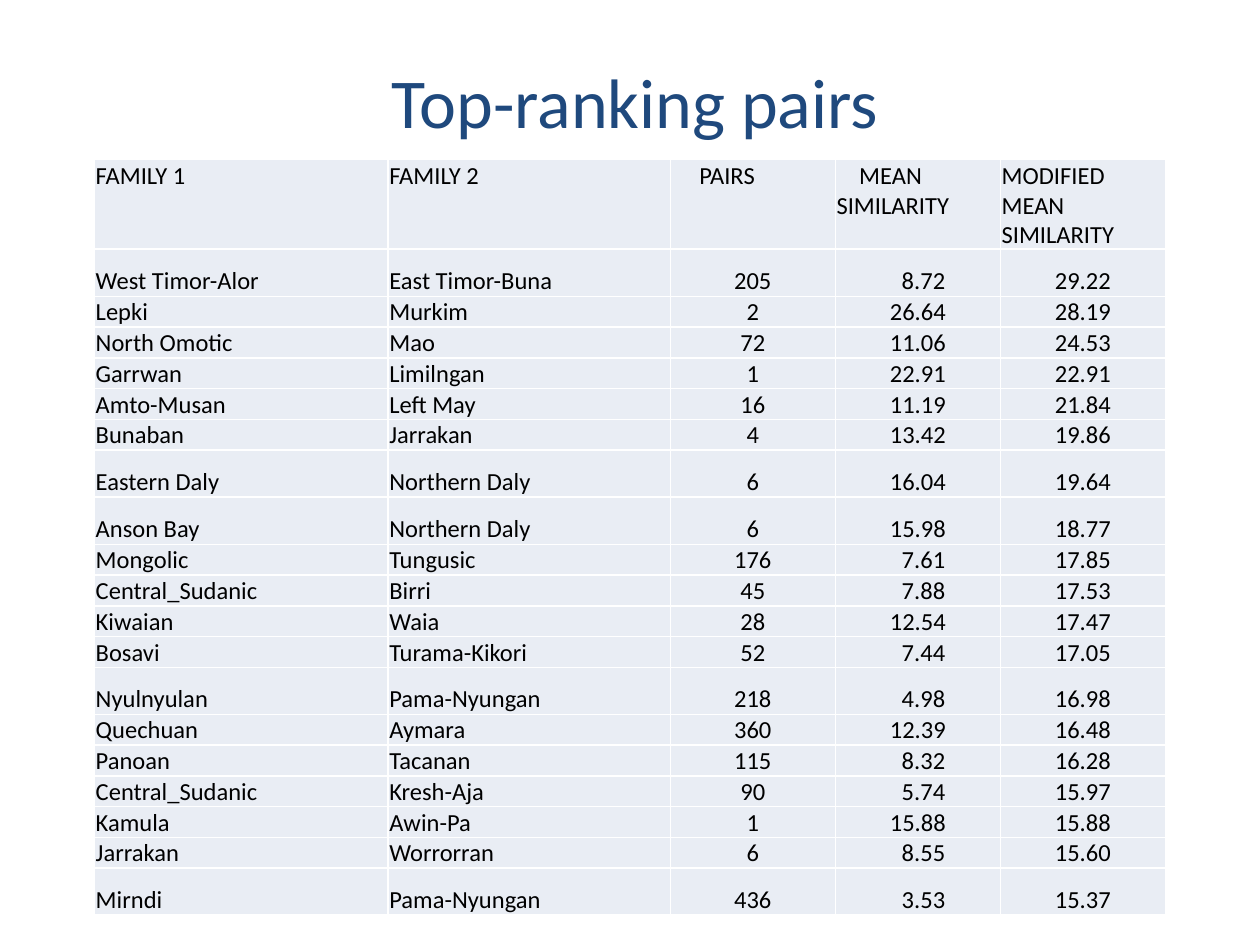
from dataclasses import dataclass

from lxml import etree
from pptx import Presentation
from pptx import util as u
from pptx.dml import color
from pptx.enum import text
from pptx.oxml import ns

WIDTH, HEIGHT = u.Inches(10), u.Inches(7.5)
COLOURS = {"title": "1F497D", "body": "000000", "cell": "E9EDF4", "border": "FFFFFF"}
FONT = "Calibri"
COLUMN_SHARES = (0.233, 0.224, 0.131, 0.131, 0.131)
SHORT_ROW, TALL_ROW = 0.028, 0.05
CELL_FORMAT = {
    "margin_left": u.Inches(0.01),
    "margin_right": u.Inches(0.01),
    "margin_top": u.Inches(0.01),
    "margin_bottom": 0,
}
LEFT, CENTER = text.PP_ALIGN.LEFT, text.PP_ALIGN.CENTER
TOP, BOTTOM = text.MSO_ANCHOR.TOP, text.MSO_ANCHOR.BOTTOM


@dataclass
class Heading:
    lines: tuple[str, ...]
    indent: float = 0


@dataclass
class Pair:
    first: str
    second: str
    count: int
    mean: float
    modified: float
    tall: bool = False


HEADINGS = (
    Heading(("FAMILY 1",)),
    Heading(("FAMILY 2",)),
    Heading(("PAIRS",), 0.22),
    Heading(("MEAN SIMILARITY",), 0.18),
    Heading(("MODIFIED MEAN", "SIMILARITY")),
)
PAIRS = (
    Pair("West Timor-Alor", "East Timor-Buna", 205, 8.72, 29.22, True),
    Pair("Lepki", "Murkim", 2, 26.64, 28.19),
    Pair("North Omotic", "Mao", 72, 11.06, 24.53),
    Pair("Garrwan", "Limilngan", 1, 22.91, 22.91),
    Pair("Amto-Musan", "Left May", 16, 11.19, 21.84),
    Pair("Bunaban", "Jarrakan", 4, 13.42, 19.86),
    Pair("Eastern Daly", "Northern Daly", 6, 16.04, 19.64, True),
    Pair("Anson Bay", "Northern Daly", 6, 15.98, 18.77, True),
    Pair("Mongolic", "Tungusic", 176, 7.61, 17.85),
    Pair("Central_Sudanic", "Birri", 45, 7.88, 17.53),
    Pair("Kiwaian", "Waia", 28, 12.54, 17.47),
    Pair("Bosavi", "Turama-Kikori", 52, 7.44, 17.05),
    Pair("Nyulnyulan", "Pama-Nyungan", 218, 4.98, 16.98, True),
    Pair("Quechuan", "Aymara", 360, 12.39, 16.48),
    Pair("Panoan", "Tacanan", 115, 8.32, 16.28),
    Pair("Central_Sudanic", "Kresh-Aja", 90, 5.74, 15.97),
    Pair("Kamula", "Awin-Pa", 1, 15.88, 15.88),
    Pair("Jarrakan", "Worrorran", 6, 8.55, 15.60),
    Pair("Mirndi", "Pama-Nyungan", 436, 3.53, 15.37, True),
)


def across(share: float) -> int:
    return round(WIDTH * share)


def down(share: float) -> int:
    return round(HEIGHT * share)


def apply(target, values: dict) -> None:
    for name, value in values.items():
        setattr(target, name, value)


def write(para, words: str, size: int, colour: str, alignment) -> None:
    para.alignment = alignment
    span = para.add_run()
    span.text = words
    apply(span.font, {"name": FONT, "size": u.Pt(size), "bold": False})
    span.font.color.rgb = color.RGBColor.from_string(COLOURS[colour])


def add_borders(cell) -> None:
    properties = cell._tc.get_or_add_tcPr()
    for side in ("lnL", "lnR", "lnT", "lnB"):
        line = etree.SubElement(properties, ns.qn(f"a:{side}"), w=str(u.Pt(1)))
        fill = etree.SubElement(line, ns.qn("a:solidFill"))
        etree.SubElement(fill, ns.qn("a:srgbClr"), val=COLOURS["border"])


def fill_cell(cell, lines: tuple[str, ...], alignment, anchor,
              margin: float = 0, indent: float = 0) -> None:
    apply(cell, CELL_FORMAT | {"vertical_anchor": anchor})
    add_borders(cell)
    cell.fill.solid()
    cell.fill.fore_color.rgb = color.RGBColor.from_string(COLOURS["cell"])
    frame = cell.text_frame
    for index, words in enumerate(lines):
        para = frame.add_paragraph() if index else frame.paragraphs[0]
        write(para, words, 14, "body", alignment)
        for name, length in (("marL", margin), ("indent", indent)):
            if length:
                para._p.get_or_add_pPr().set(name, str(u.Inches(length)))


def add_title(page) -> None:
    box = page.shapes.add_textbox(0, down(0.023), across(1.008), down(0.167))
    apply(box.text_frame, {"word_wrap": True, "vertical_anchor": text.MSO_ANCHOR.MIDDLE})
    write(box.text_frame.paragraphs[0], "Top-ranking pairs", 40, "title", CENTER)


def add_pairs_table(page) -> None:
    holder = page.shapes.add_table(len(PAIRS) + 1, len(HEADINGS), across(0.075),
                                   down(0.169), across(0.85), down(0.797))
    table = holder.table
    apply(table, {"first_row": False, "horz_banding": False})
    for column, share in zip(table.columns, COLUMN_SHARES):
        column.width = across(share)
    table.rows[0].height = down(SHORT_ROW)
    for column, heading in enumerate(HEADINGS):
        fill_cell(table.cell(0, column), heading.lines, LEFT, TOP, indent=heading.indent)
    for row, pair in enumerate(PAIRS, 1):
        table.rows[row].height = down(TALL_ROW if pair.tall else SHORT_ROW)
        values = (pair.first, pair.second, str(pair.count),
                  f"{pair.mean:.2f}", f"{pair.modified:.2f}")
        for column, words in enumerate(values):
            margin = 0.09 if column == 3 and pair.mean < 10 else 0
            fill_cell(table.cell(row, column), (words,), CENTER if column > 1 else LEFT,
                      BOTTOM, margin=margin)
    holder.height = down(0.797)


def main() -> None:
    deck = Presentation()
    apply(deck, {"slide_width": WIDTH, "slide_height": HEIGHT})
    page = deck.slides.add_slide(deck.slide_layouts[6])
    add_title(page)
    add_pairs_table(page)
    deck.save("out.pptx")


if __name__ == "__main__":
    main()
